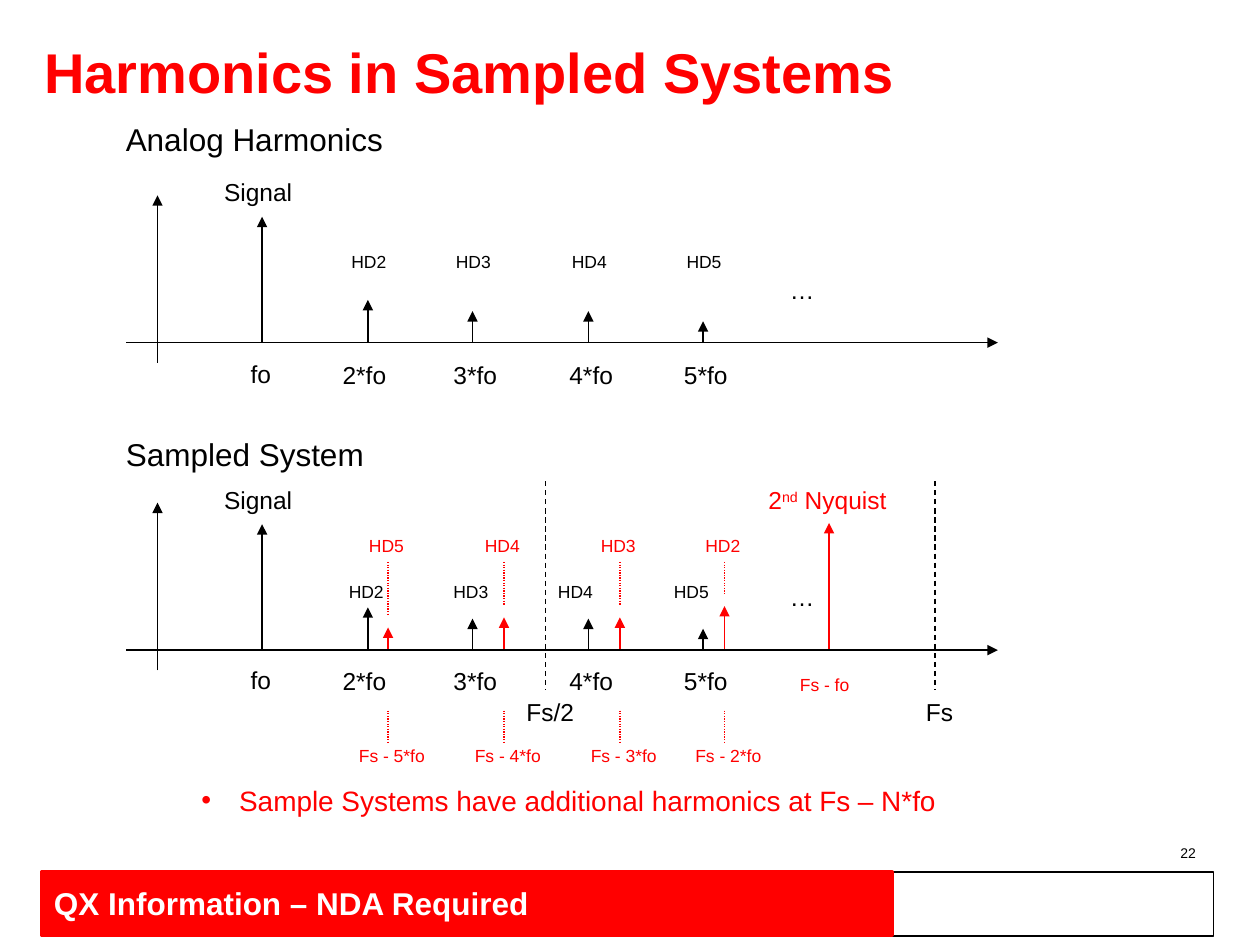
from lxml.etree import SubElement
from pptx import Presentation
from pptx.dml.color import RGBColor
from pptx.enum.dml import MSO_LINE
from pptx.enum.shapes import MSO_CONNECTOR, MSO_SHAPE
from pptx.enum.text import MSO_ANCHOR, MSO_AUTO_SIZE, PP_ALIGN
from pptx.oxml.ns import qn
from pptx.util import Inches, Pt

THEME = {
    "font": "Arial",
    "ink": RGBColor(0, 0, 0),
    "accent": RGBColor(255, 0, 0),
    "paper": RGBColor(255, 255, 255),
    "title": 32, "heading": 18, "takeaway": 16, "label": 14, "small": 10, "number": 8,
    "line": 0.75, "bar_line": 2,
}

TITLE = "Harmonics in Sampled Systems"
NOTICE = "QX Information – NDA Required"
SLIDE_NUMBER = "22"
TAKEAWAY = "Sample Systems have additional harmonics at Fs – N*fo"

SYSTEMS = [
    {"heading": "Analog Harmonics", "width": 2.24, "heading_top": 0.9, "axis": 2.72,
     "axis_foot": 2.88, "name_top": 1.94, "name_lefts": [2.69, 3.52, 4.44, 5.35],
     "frequency_top": 2.81},
    {"heading": "Sampled System", "width": 2.09, "heading_top": 3.4, "axis": 5.16,
     "axis_foot": 5.32, "name_top": 4.56, "name_lefts": [2.67, 3.5, 4.33, 5.25],
     "frequency_top": 5.24},
]
HARMONICS = [
    ("HD2", "2*fo", 2.92, 0.34, 2.62),
    ("HD3", "3*fo", 3.75, 0.25, 3.5),
    ("HD4", "4*fo", 4.67, 0.25, 4.42),
    ("HD5", "5*fo", 5.58, 0.17, 5.33),
]
IMAGES = [
    ("HD2", "Fs - 2*fo", 5.75, 0.34),
    ("HD3", "Fs - 3*fo", 4.92, 0.25),
    ("HD4", "Fs - 4*fo", 4, 0.25),
    ("HD5", "Fs - 5*fo", 3.08, 0.17),
]
IMAGE_AXIS = 5.15
SAMPLING_MARKS = [("Fs/2", 4.33, 4.08, 0.58), ("Fs", 7.42, 7.25, 0.42)]
NYQUIST = [("2", False), ("nd", True), (" Nyquist", False)]


def apply(target, **values):
    for attribute, value in values.items():
        setattr(target, attribute, value)


def style(font, size, color="ink", bold=False):
    apply(font, name=THEME["font"], size=Pt(THEME[size]), bold=bold)
    font.color.rgb = THEME[color]


def label(slide, text, left, top, width, size="label", color="ink"):
    height = {"heading": 0.4, "takeaway": 0.37, "label": 0.33, "small": 0.27, "number": 0.23}[size]
    box = slide.shapes.add_textbox(Inches(left), Inches(top), Inches(width), Inches(height))
    apply(box.text_frame, word_wrap=False, auto_size=MSO_AUTO_SIZE.SHAPE_TO_FIT_TEXT)
    paragraph = box.text_frame.paragraphs[0]
    for words, raised in [(text, False)] if isinstance(text, str) else text:
        run = paragraph.add_run()
        run.text = words
        style(run.font, size, color)
        if raised:
            run.font._element.set("baseline", "30000")
    return box


def line(slide, start, end, color="ink", dash=None, arrow=False):
    connector = slide.shapes.add_connector(
        MSO_CONNECTOR.STRAIGHT, *(Inches(v) for v in (*start, *end)))
    connector.line.color.rgb = THEME[color]
    apply(connector.line, width=Pt(THEME["line"]), dash_style=dash)
    if arrow:
        SubElement(connector.line._get_or_add_ln(), qn("a:tailEnd"), type="triangle")
    SubElement(connector._element.spPr, qn("a:effectLst"))


def tone(slide, x, axis, height, color="ink"):
    line(slide, (x, axis), (x, axis - height), color, arrow=True)


def bar(slide, left, top, width, height, line_color, line_width, fill=None):
    shape = slide.shapes.add_shape(
        MSO_SHAPE.RECTANGLE, *(Inches(v) for v in (left, top, width, height)))
    shape.shadow.inherit = False
    if fill:
        shape.fill.solid()
        shape.fill.fore_color.rgb = THEME[fill]
    else:
        shape.fill.background()
    shape.line.color.rgb = THEME[line_color]
    shape.line.width = Pt(THEME[line_width])
    return shape


def add_frame(slide):
    bar(slide, 0.37, 6.92, 9.26, 0.51, "ink", "line")
    notice = bar(slide, 0.33, 6.92, 6.75, 0.5, "accent", "bar_line", "accent")
    notice.text_frame.text = NOTICE
    notice.text_frame.vertical_anchor = MSO_ANCHOR.MIDDLE
    notice_line = notice.text_frame.paragraphs[0]
    notice_line.alignment = PP_ALIGN.LEFT
    style(notice_line.font, "heading", "paper", True)

    title = slide.shapes.title
    apply(title, left=Inches(0.25), top=Inches(0.16), width=Inches(9.25), height=Inches(0.89))
    title.text_frame.text = TITLE
    apply(title.text_frame, vertical_anchor=MSO_ANCHOR.MIDDLE, auto_size=MSO_AUTO_SIZE.NONE)
    title_line = title.text_frame.paragraphs[0]
    apply(title_line, alignment=PP_ALIGN.LEFT, line_spacing=0.85)
    style(title_line.font, "title", "accent", True)

    number = label(slide, SLIDE_NUMBER, 7.26, 6.65, 2.33, "number")
    number.text_frame.word_wrap = True
    number.text_frame.paragraphs[0].alignment = PP_ALIGN.RIGHT


def add_system(slide, system):
    axis, frequency_top = system["axis"], system["frequency_top"]
    label(slide, system["heading"], 0.9, system["heading_top"], system["width"], "heading")
    line(slide, (1.25, system["axis_foot"]), (1.25, axis - 1.17), arrow=True)
    line(slide, (1, axis), (7.92, axis), arrow=True)
    tone(slide, 2.08, axis, 1)
    label(slide, "Signal", 1.68, axis - 1.36, 0.74)
    label(slide, "fo", 1.89, frequency_top - 0.01, 0.36)
    label(slide, "…", 6.17, axis - 0.59, 0.4)
    for (name, frequency, x, height, left), name_left in zip(HARMONICS, system["name_lefts"]):
        tone(slide, x, axis, height)
        label(slide, name, name_left, system["name_top"], 0.48, "small")
        label(slide, frequency, left, frequency_top, 0.55)


def add_images(slide):
    for name, frequency, x, height in IMAGES:
        tone(slide, x, IMAGE_AXIS, height, "accent")
        label(slide, name, x - 0.25, 4.2, 0.48, "small", "accent")
        label(slide, frequency, x - 0.33, 5.86, 0.75, "small", "accent")
        for top, bottom in ((4.46, IMAGE_AXIS - height - 0.1), (5.64, 5.89)):
            line(slide, (x, top), (x, bottom), "accent", MSO_LINE.ROUND_DOT)


def add_sampling(slide):
    for name, x, left, width in SAMPLING_MARKS:
        line(slide, (x, 3.82), (x, 5.48), dash=MSO_LINE.DASH)
        label(slide, name, left, 5.48, width)
    tone(slide, 6.58, IMAGE_AXIS, 1, "accent")
    label(slide, NYQUIST, 6, 3.8, 1.15, color="accent")
    label(slide, "Fs - fo", 6.25, 5.3, 0.62, "small", "accent")


def add_takeaway(slide):
    takeaway = label(slide, TAKEAWAY, 1.5, 6.17, 6.26, "takeaway", "accent")
    properties = takeaway.text_frame.paragraphs[0]._p.get_or_add_pPr()
    properties.set("marL", str(Inches(0.3)))
    properties.set("indent", str(-Inches(0.3)))
    SubElement(properties, qn("a:buFont"), typeface=THEME["font"])
    SubElement(properties, qn("a:buChar"), char="•")


def main():
    deck = Presentation()
    apply(deck, slide_width=Inches(10), slide_height=Inches(7.5))
    slide = deck.slides.add_slide(deck.slide_layouts[5])
    add_frame(slide)
    for system in SYSTEMS:
        add_system(slide, system)
    add_images(slide)
    add_sampling(slide)
    add_takeaway(slide)
    deck.save("out.pptx")


if __name__ == "__main__":
    main()
